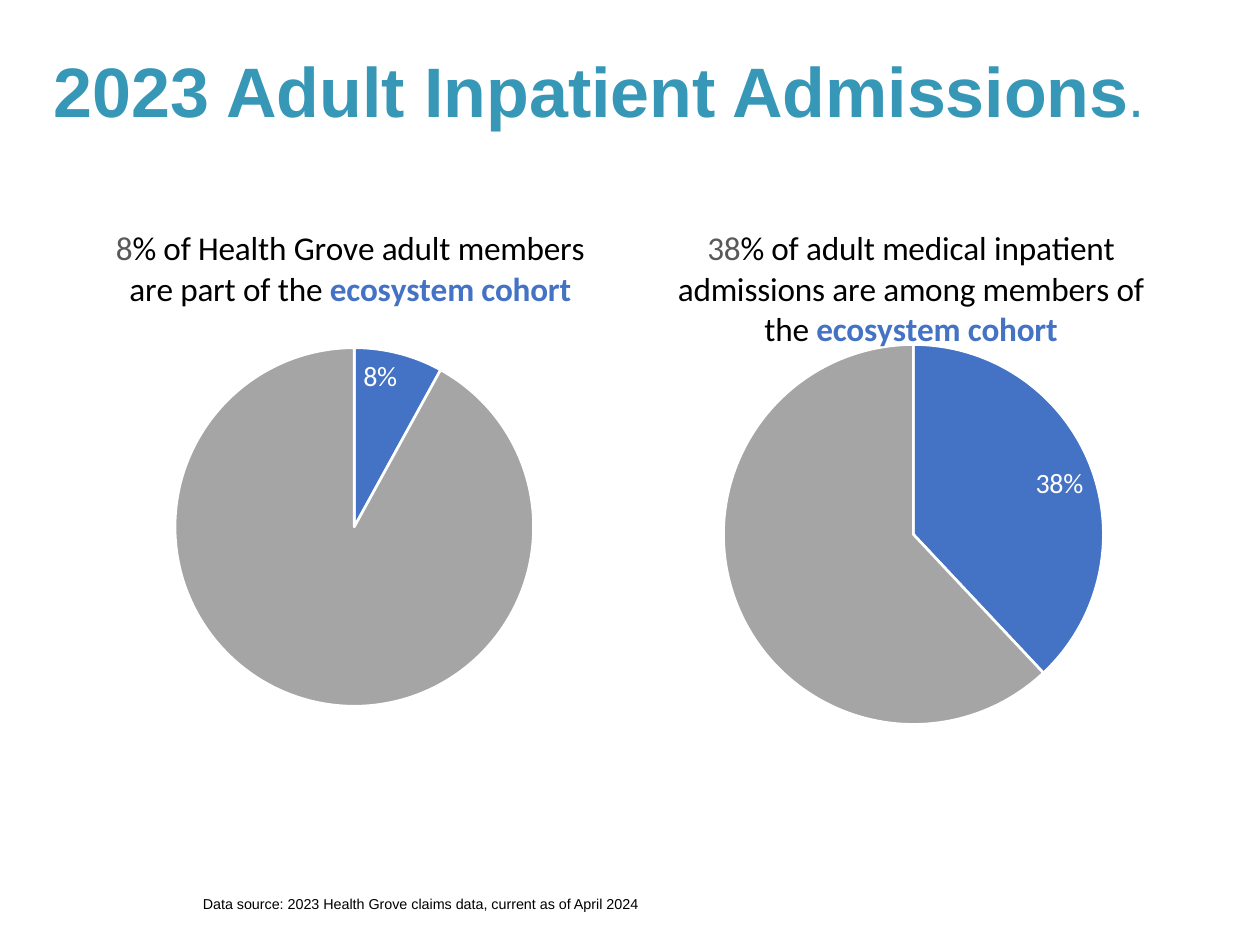
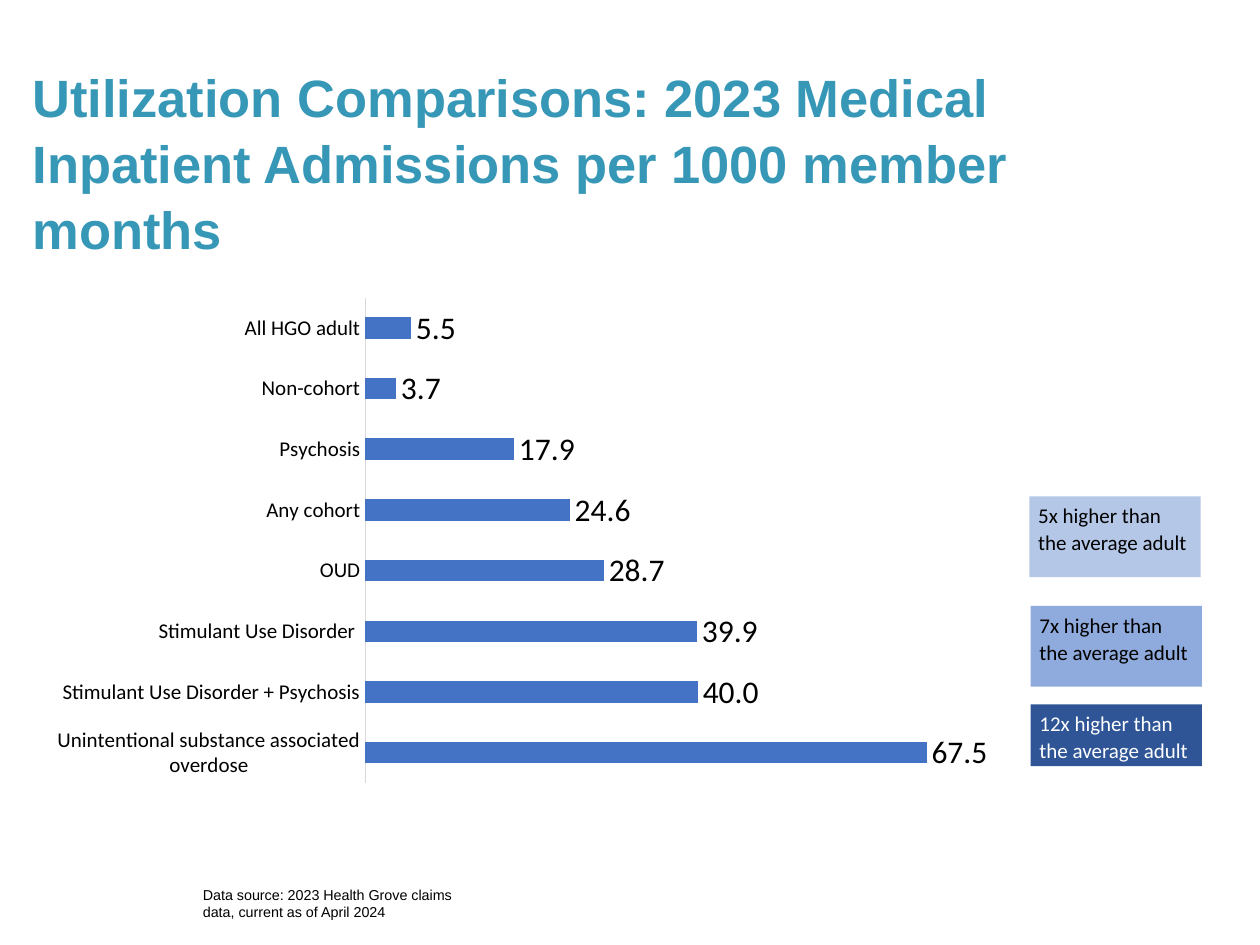
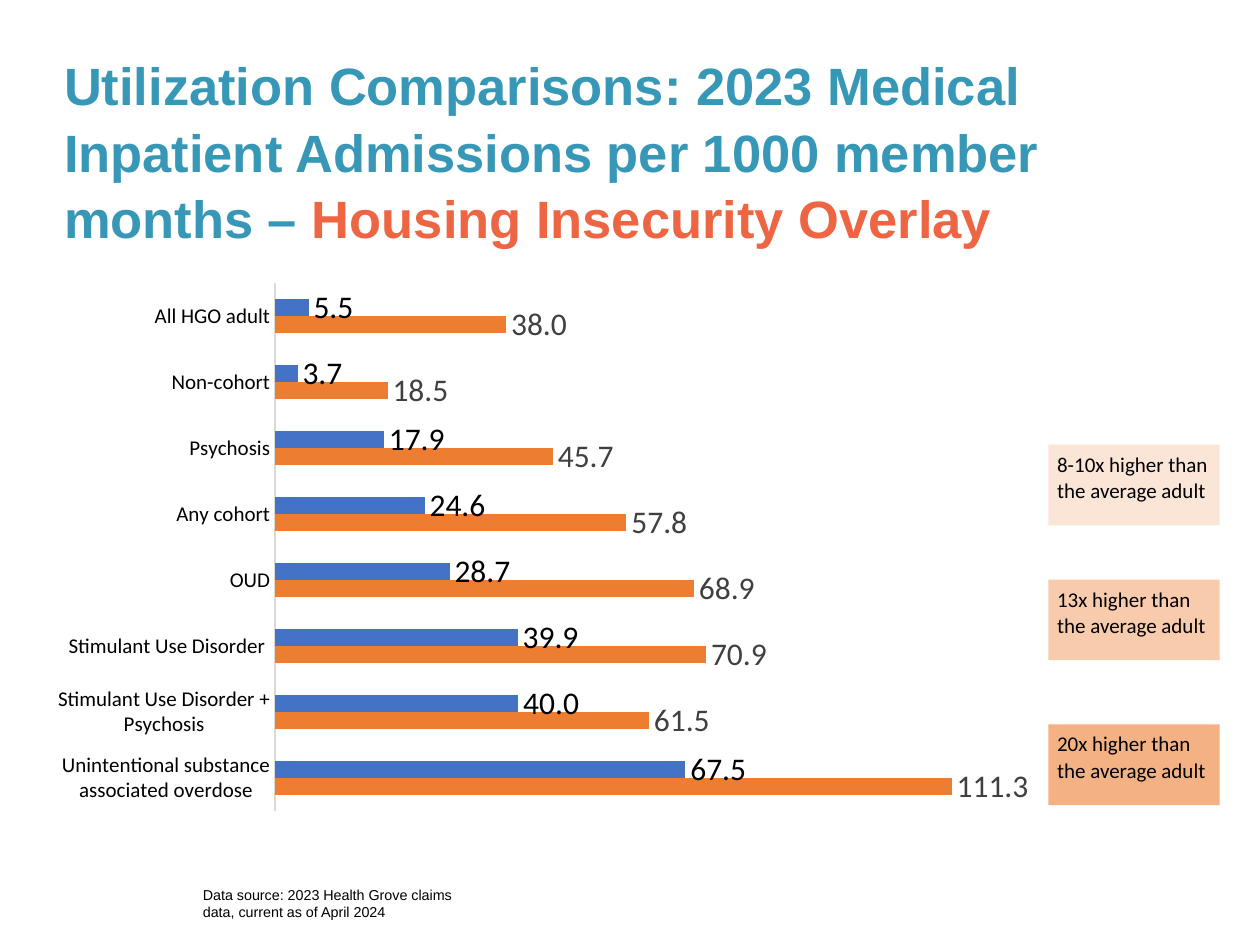
from pptx import Presentation
from pptx.chart.data import CategoryChartData
from pptx.dml.color import RGBColor
from pptx.enum.chart import XL_CHART_TYPE, XL_LABEL_POSITION, XL_TICK_MARK
from pptx.enum.shapes import MSO_SHAPE
from pptx.enum.text import MSO_ANCHOR, PP_ALIGN
from pptx.oxml import parse_xml
from pptx.oxml.ns import nsdecls, qn
from pptx.util import Inches, Pt

TEAL, CORAL = "3797B7", "ED6543"
BLUE, ORANGE, GREY = "4472C4", "ED7D31", "A5A5A5"
BLACK, WHITE, DARK, MID, PALE = "000000", "FFFFFF", "404040", "595959", "D9D9D9"
HEAD, BODY = "Arial", "Calibri"
SOURCE = "Data source: 2023 Health Grove claims data, current as of April 2024"
HEADING = "Utilization Comparisons: 2023 Medical Inpatient Admissions per 1000 member months"
GROUPS = ["All HGO adult", "Non-cohort", "Psychosis", "Any cohort", "OUD",
          "Stimulant Use Disorder ", "Stimulant Use Disorder + Psychosis",
          "Unintentional substance associated overdose"]
ALL_ADULTS = [5.5, 3.7, 17.9, 24.6, 28.7, 39.9, 40.0, 67.5]
HOUSING = [38.0, 18.5, 45.7, 57.8, 68.9, 70.9, 61.5, 111.3]


def rgb(color):
    return RGBColor.from_string(color)


class Deck:
    def __init__(self):
        self.prs = Presentation()
        self.prs.slide_width, self.prs.slide_height = Inches(10), Inches(7.5)
        self.s = None

    def slide(self):
        self.s = self.prs.slides.add_slide(self.prs.slide_layouts[6])

    def font(self, font, size, color, name=BODY, bold=False):
        font.size, font.name, font.bold = Pt(size), name, bold
        font.color.rgb = rgb(color)

    def runs(self, p, runs, name=BODY):
        for text, size, color, bold in runs:
            r = p.add_run()
            r.text = text
            self.font(r.font, size, color, name, bold)

    def frame(self, sp, anchor, inset):
        tf = sp.text_frame
        tf.word_wrap, tf.vertical_anchor = True, anchor
        tf.margin_left = tf.margin_right = Inches(inset[0])
        tf.margin_top = tf.margin_bottom = Inches(inset[1])
        return tf.paragraphs[0]

    def textbox(self, box, runs, anchor=MSO_ANCHOR.TOP, inset=(0.1, 0.05), spacing=1.0):
        sp = self.s.shapes.add_textbox(*map(Inches, box))
        p = self.frame(sp, anchor, inset)
        p.line_spacing = spacing
        self.runs(p, runs, HEAD)

    def title(self, box, runs, spacing=1.05):
        self.textbox(box, runs, spacing=spacing)

    def footer(self, width):
        self.textbox((1.54, 7.02, width, 0.3), [(SOURCE, 8.2, BLACK, False)],
                     MSO_ANCHOR.MIDDLE, (0.07, 0.04))

    def callout(self, x, y, times, fill, color=BLACK, height=0.64):
        sp = self.s.shapes.add_shape(MSO_SHAPE.RECTANGLE, Inches(x), Inches(y),
                                     Inches(1.36), Inches(height))
        sp.shadow.inherit = False
        sp.fill.solid()
        sp.fill.fore_color.rgb = rgb(fill)
        sp.line.fill.background()
        p = self.frame(sp, MSO_ANCHOR.TOP, (0.07, 0.04))
        p.alignment, p.line_spacing = PP_ALIGN.LEFT, 1.06
        self.runs(p, [(f"{times} higher than the average adult", 12, color, False)])

    def chart(self, kind, box, cats, series, layout, fmt):
        data = CategoryChartData(number_format=fmt)
        data.categories = cats
        for i, values in enumerate(series, 1):
            data.add_series(f"Series {i}", values)
        chart = self.s.shapes.add_chart(kind, *map(Inches, box), data).chart
        chart.has_legend = chart.has_title = False
        self.font(chart.font, 10, BLACK)
        area = chart.plots[0]._element.getparent()
        for old in area.findall(qn("c:layout")):
            area.remove(old)
        parts = "".join(f'<c:{tag} val="{val}"/>' for tag, val in zip("xywh", layout))
        area.insert(0, parse_xml(
            f'<c:layout {nsdecls("c")}><c:manualLayout><c:layoutTarget val="inner"/>'
            f'<c:xMode val="edge"/><c:yMode val="edge"/>{parts}</c:manualLayout></c:layout>'))
        return chart

    def labels(self, series, size, color, fmt, position):
        dl = series.data_labels
        dl.show_value, dl.position = True, position
        dl.number_format, dl.number_format_is_linked = fmt, False
        self.font(dl.font, size, color)
        return dl

    def pie(self, x, share, caption, layout):
        chart = self.chart(XL_CHART_TYPE.PIE, (x, 1.63, 5.06, 4.28), ["1", "2"],
                           [[share, round(1 - share, 2)]], layout, "0%")
        chart.has_title = True
        self.runs(chart.chart_title.text_frame.paragraphs[0],
                  [(f"{share * 100:.0f}", 19, MID, False), (caption, 19, BLACK, False),
                   ("ecosystem cohort", 19, BLUE, True)])
        chart.plots[0].vary_by_categories = True
        series = chart.plots[0].series[0]
        for i, color in enumerate((BLUE, GREY)):
            fmt = series.points[i].format
            fmt.fill.solid()
            fmt.fill.fore_color.rgb = rgb(color)
            fmt.line.color.rgb = rgb(WHITE)
            fmt.line.width = Pt(1.5)
        dl = self.labels(series, 16, WHITE, "0%", XL_LABEL_POSITION.INSIDE_END)
        dl._element.insert(0, parse_xml(
            f'<c:dLbl {nsdecls("c")}><c:idx val="1"/><c:delete val="1"/></c:dLbl>'))

    def bars(self, box, series, layout, top):
        chart = self.chart(XL_CHART_TYPE.BAR_CLUSTERED, box, GROUPS,
                           [values for values, _, _ in series], layout, "0.0")
        plot = chart.plots[0]
        plot.gap_width, plot.overlap, plot.vary_by_categories = 182, 0, False
        for ser, (_, fill, color) in zip(plot.series, series):
            ser.format.fill.solid()
            ser.format.fill.fore_color.rgb = rgb(fill)
            self.labels(ser, 18, color, "0.0", XL_LABEL_POSITION.OUTSIDE_END)
        cat, val = chart.category_axis, chart.value_axis
        cat.reverse_order = True
        cat.major_tick_mark = cat.minor_tick_mark = XL_TICK_MARK.NONE
        cat.format.line.color.rgb = rgb(PALE)
        cat.format.line.width = Pt(0.75)
        self.font(cat.tick_labels.font, 12, BLACK)
        val.minimum_scale, val.maximum_scale = 0, top
        val.has_major_gridlines = val.visible = False


def main():
    d = Deck()

    d.slide()
    d.title((0.33, 0.4, 9.18, 1.49), [("2023 Adult Inpatient Admissions", 40, TEAL, True),
                                      (".", 33, TEAL, False)], 0.9)
    d.footer(4)
    d.pie(0.25, 0.08, "% of Health Grove adult members are part of the ",
          (0.225, 0.264, 0.563, 0.665))
    d.pie(4.7, 0.38, "% of adult medical inpatient admissions are among members of the ",
          (0.206, 0.258, 0.596, 0.705))

    d.slide()
    d.bars((0.32, 1.89, 7.86, 4.33), [(ALL_ADULTS, BLUE, BLACK)],
           (0.328, 0.109, 0.672, 0.891), 80)
    d.callout(8.17, 3.94, "5x", "B4C7E7")
    d.callout(8.18, 4.81, "7x", "8FAADC")
    d.callout(8.18, 5.59, "12x", "2F5597", WHITE, 0.49)
    d.title((0.16, 0.44, 8.96, 1.62), [(HEADING, 30, TEAL, True)])
    d.footer(2.31)

    d.slide()
    d.title((0.41, 0.35, 8.68, 1.62), [(HEADING + " – ", 30, TEAL, True),
                                       ("Housing Insecurity Overlay", 30, CORAL, True)])
    d.bars((0, 2.24, 8.84, 4.71), [(ALL_ADULTS, BLUE, BLACK), (HOUSING, ORANGE, DARK)],
           (0.247, 0, 0.655, 0.891), 120)
    for y, times, fill in ((3.53, "8-10x", "FBE5D6"), (4.6, "13x", "F8CBAD"),
                           (5.75, "20x", "F4B183")):
        d.callout(8.32, y, times, fill)
    d.footer(2.31)

    d.prs.save("out.pptx")


if __name__ == "__main__":
    main()
